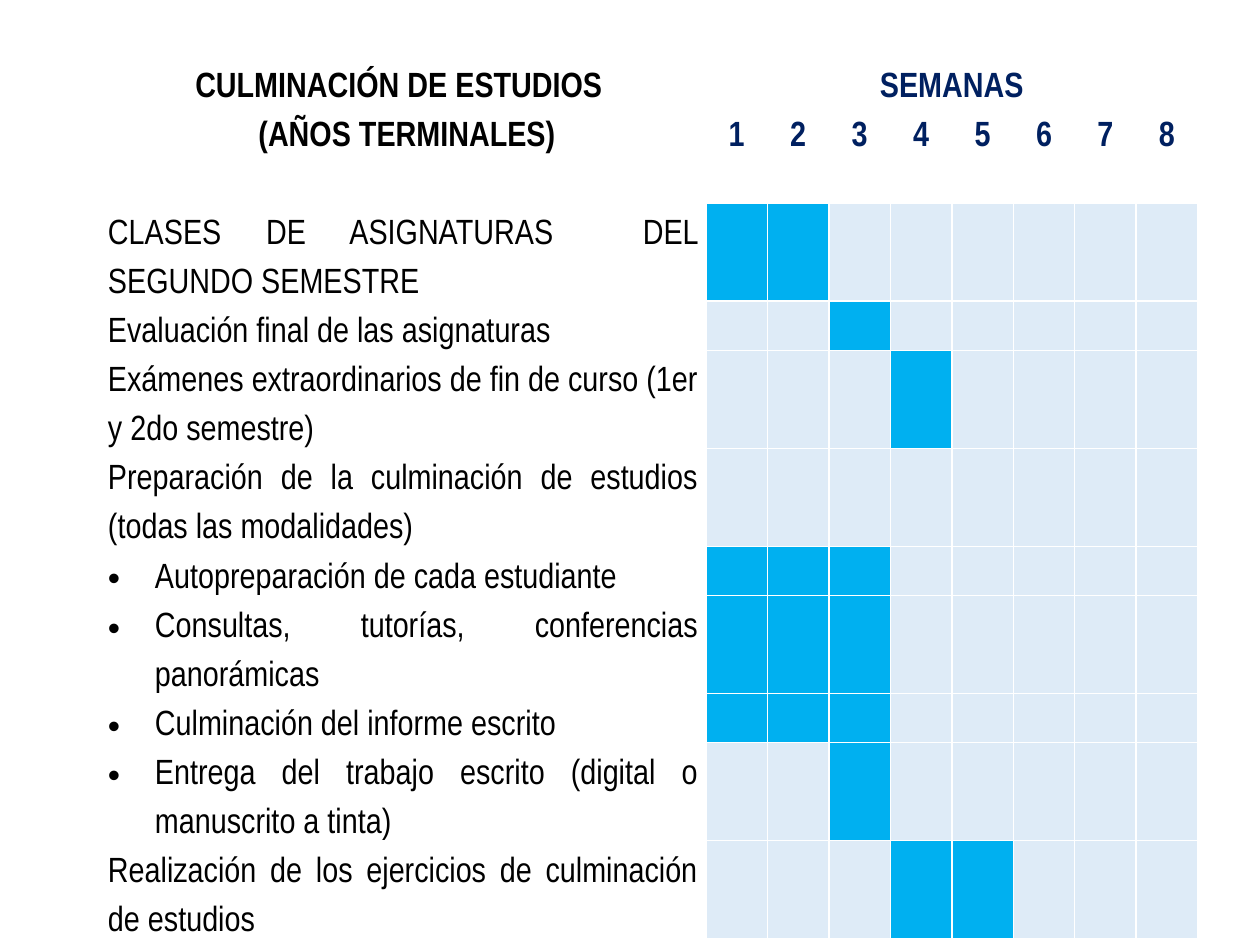
from lxml.etree import SubElement
from pptx import Presentation
from pptx.dml.color import RGBColor as RGB
from pptx.enum.text import PP_ALIGN as ALIGN
from pptx.oxml import parse_xml
from pptx.oxml.ns import nsdecls, qn
from pptx.util import Pt

PX = 914400 // 126
COLORS = {"white": "FFFFFF", "black": "000000", "navy": "002060",
          "busy": "00B0F0", "free": "DEEBF7"}
FONT = "Arial Narrow"
TITLE = ["CULMINACIÓN DE ESTUDIOS ", " (AÑOS TERMINALES)"]
WEEKS = 8
# task, bulleted, lines of text, busy weeks
TASKS = [
    ("CLASES DE ASIGNATURAS  DEL SEGUNDO SEMESTRE", False, 2, [1, 2]),
    ("Evaluación final de las asignaturas", False, 1, [3]),
    ("Exámenes extraordinarios de fin de curso (1er y 2do semestre)", False, 2, [4]),
    ("Preparación de la culminación de estudios (todas las modalidades)", False, 2, []),
    ("Autopreparación de cada estudiante", True, 1, [1, 2, 3]),
    ("Consultas, tutorías, conferencias panorámicas", True, 2, [1, 2, 3]),
    ("Culminación del informe escrito", True, 1, [1, 2, 3]),
    ("Entrega del trabajo escrito (digital o manuscrito a tinta)", True, 2, [3]),
    ("Realización de los ejercicios de culminación de estudios", False, 2, [4, 5]),
]
LEFT, TOP, TASK_W, WEEKS_W, LINE, INDENT = 100, 56, 606, 492, 49, 47


def paint(cell, color, bottom=1):
    """Fill a cell, trim its margins and give it white borders."""
    cell.margin_left = cell.margin_right = 8 * PX
    cell.margin_top = cell.margin_bottom = 0
    cell.fill.solid()
    cell.fill.fore_color.rgb = RGB.from_string(COLORS[color])
    props = cell._tc.get_or_add_tcPr()
    for i, side in enumerate("LRTB"):
        width = Pt(bottom if side == "B" else 1)
        props.insert(i, parse_xml(
            f'<a:ln{side} {nsdecls("a")} w="{width}"><a:solidFill>'
            f'<a:srgbClr val="{COLORS["white"]}"/></a:solidFill></a:ln{side}>'))


def write(cell, lines, color="black", bold=True, align=ALIGN.CENTER):
    frame = cell.text_frame
    for i, line in enumerate(lines):
        para = frame.add_paragraph() if i else frame.paragraphs[0]
        para.alignment = align
        para.line_spacing = Pt(28)
        run = para.add_run()
        run.text = line
        font = run.font
        font.name, font.size, font.bold = FONT, Pt(20), bold
        font.color.rgb = RGB.from_string(COLORS[color])


def add_bullet(para):
    props = para._p.get_or_add_pPr()
    props.set("marL", str(INDENT * PX))
    props.set("indent", str(-INDENT * PX))
    SubElement(props, qn("a:buFont")).set("typeface", "Arial")
    SubElement(props, qn("a:buChar")).set("char", "•")


deck = Presentation()
deck.slide_width, deck.slide_height = 1260 * PX, 945 * PX
slide = deck.slides.add_slide(deck.slide_layouts[6])

heights = [LINE, 2 * LINE] + [task[2] * LINE for task in TASKS]
table = slide.shapes.add_table(
    len(heights), WEEKS + 1, LEFT * PX, TOP * PX,
    (TASK_W + WEEKS_W) * PX, sum(heights) * PX).table
for row, height in zip(table.rows, heights):
    row.height = height * PX
for i, col in enumerate(table.columns):
    col.width = WEEKS_W * PX // WEEKS if i else TASK_W * PX

for col in range(WEEKS + 1):
    paint(table.cell(0, col), "white", 3)
    paint(table.cell(1, col), "white")
table.cell(0, 0).merge(table.cell(1, 0))
table.cell(0, 1).merge(table.cell(0, WEEKS))
write(table.cell(0, 0), TITLE)
write(table.cell(0, 1), ["SEMANAS"], "navy")
for week in range(1, WEEKS + 1):
    write(table.cell(1, week), [str(week)], "navy")

for row, (text, bullet, _, busy) in enumerate(TASKS, 2):
    name = table.cell(row, 0)
    paint(name, "white")
    write(name, [text], bold=False, align=ALIGN.JUSTIFY)
    if bullet:
        add_bullet(name.text_frame.paragraphs[0])
    for week in range(1, WEEKS + 1):
        paint(table.cell(row, week), "busy" if week in busy else "free")

deck.save("out.pptx")
